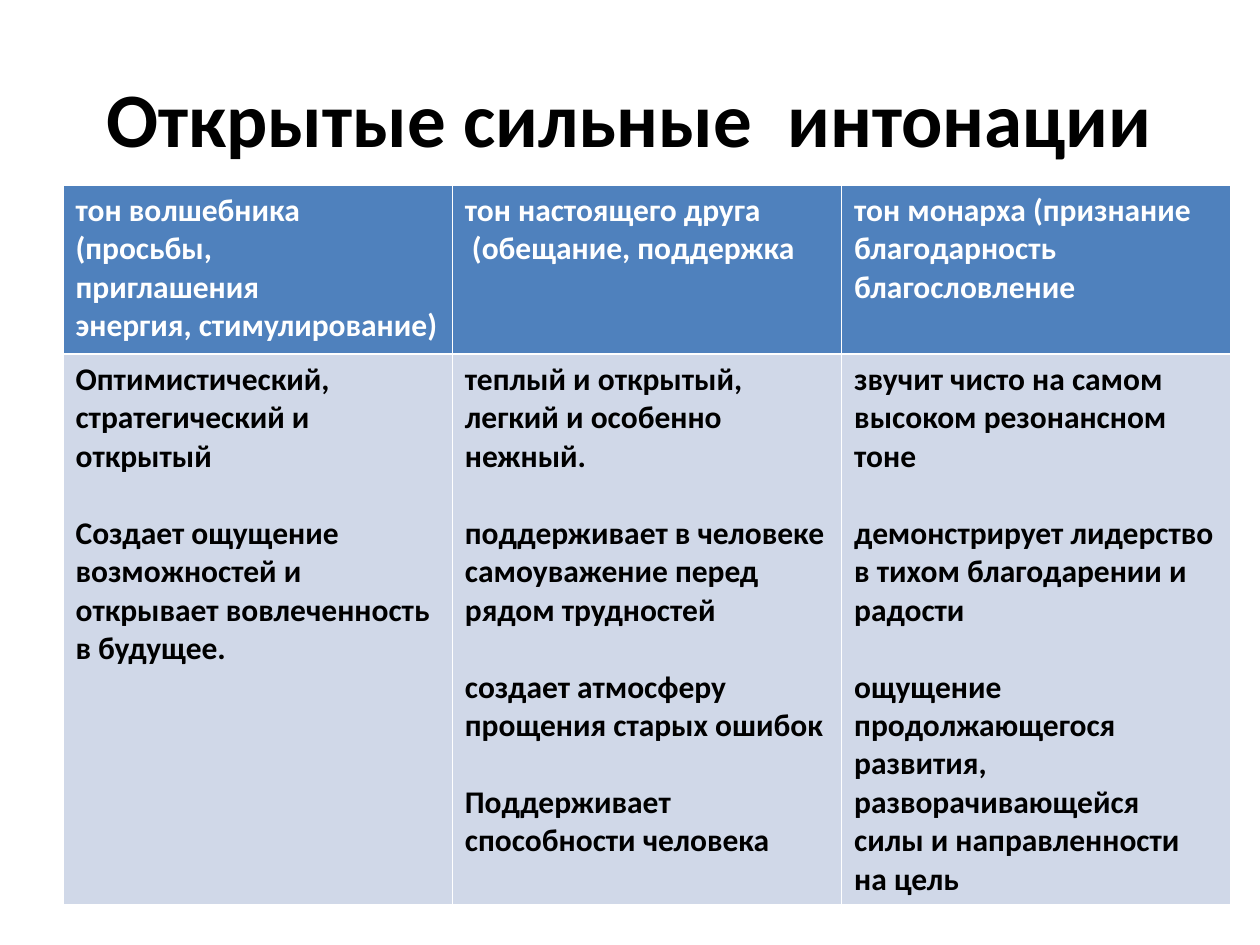
from dataclasses import dataclass

from pptx import Presentation
from pptx.dml.color import RGBColor
from pptx.enum.text import MSO_ANCHOR, PP_ALIGN
from pptx.util import Inches, Pt


@dataclass(frozen=True)
class Theme:
    font: str = "Calibri"
    title_size: int = 44
    cell_size: int = 18
    paragraph_gap: int = 22
    dark: str = "000000"
    light: str = "FFFFFF"
    header_fill: str = "4F81BD"
    body_fill: str = "D0D8E8"


@dataclass(frozen=True)
class Tone:
    heading: tuple[str, ...]
    qualities: tuple[str, ...]


THEME = Theme()
TITLE = "Открытые сильные  интонации"
COLUMN_WIDTH = 3.09
ROW_HEIGHTS = (1.34, 4.37)
TONES = (
    Tone(
        ("тон волшебника (просьбы,", "приглашения", "энергия, стимулирование)"),
        (
            "Оптимистический, стратегический и открытый",
            "Создает ощущение возможностей и открывает вовлеченность в будущее.",
        ),
    ),
    Tone(
        ("тон настоящего друга", "\N{NO-BREAK SPACE}(обещание, поддержка"),
        (
            "теплый и открытый, легкий и особенно нежный.",
            "поддерживает в человеке самоуважение перед рядом трудностей",
            "создает атмосферу прощения старых ошибок",
            "Поддерживает способности человека",
        ),
    ),
    Tone(
        ("тон монарха (признание", "благодарность", "благословление"),
        (
            "звучит чисто на самом высоком резонансном тоне",
            "демонстрирует лидерство в тихом благодарении и радости",
            "ощущение  продолжающегося развития, разворачивающейся  силы и направленности на цель",
        ),
    ),
)


def format_paragraph(paragraph, size: int, color: str) -> None:
    """Apply the bold slide font in the given size and colour."""
    font = paragraph.font
    font.name = THEME.font
    font.size = Pt(size)
    font.bold = True
    font.color.rgb = RGBColor.from_string(color)


def add_title(slide, text: str) -> None:
    """Place and format the title placeholder."""
    title = slide.shapes.title
    title.left, title.top = Inches(0.5), Inches(0.3)
    title.width, title.height = Inches(9), Inches(1.25)
    frame = title.text_frame
    frame.text = text
    frame.vertical_anchor = MSO_ANCHOR.MIDDLE
    paragraph = frame.paragraphs[0]
    paragraph.alignment = PP_ALIGN.CENTER
    format_paragraph(paragraph, THEME.title_size, THEME.dark)


def fill_cell(cell, lines: tuple[str, ...], fill: str, color: str, gap: int = 0) -> None:
    """Write one paragraph per line, with a gap between paragraphs."""
    cell.fill.solid()
    cell.fill.fore_color.rgb = RGBColor.from_string(fill)
    cell.text = "\n".join(lines)
    for index, paragraph in enumerate(cell.text_frame.paragraphs):
        format_paragraph(paragraph, THEME.cell_size, color)
        if index and gap:
            paragraph.space_before = Pt(gap)


def add_tone_table(slide, tones: tuple[Tone, ...]) -> None:
    """Add a table with one column per tone."""
    table = slide.shapes.add_table(
        len(ROW_HEIGHTS), len(tones), Inches(0.5), Inches(1.47),
        Inches(COLUMN_WIDTH * len(tones)), Inches(sum(ROW_HEIGHTS)),
    ).table
    for row, height in zip(table.rows, ROW_HEIGHTS):
        row.height = Inches(height)
    for column, tone in enumerate(tones):
        table.columns[column].width = Inches(COLUMN_WIDTH)
        fill_cell(table.cell(0, column), tone.heading, THEME.header_fill, THEME.light)
        fill_cell(table.cell(1, column), tone.qualities, THEME.body_fill, THEME.dark,
                  THEME.paragraph_gap)


def main() -> None:
    """Build and save the slide."""
    presentation = Presentation()
    presentation.slide_width, presentation.slide_height = Inches(10), Inches(7.5)
    slide = presentation.slides.add_slide(presentation.slide_layouts[5])
    add_title(slide, TITLE)
    add_tone_table(slide, TONES)
    presentation.save("out.pptx")


if __name__ == "__main__":
    main()
